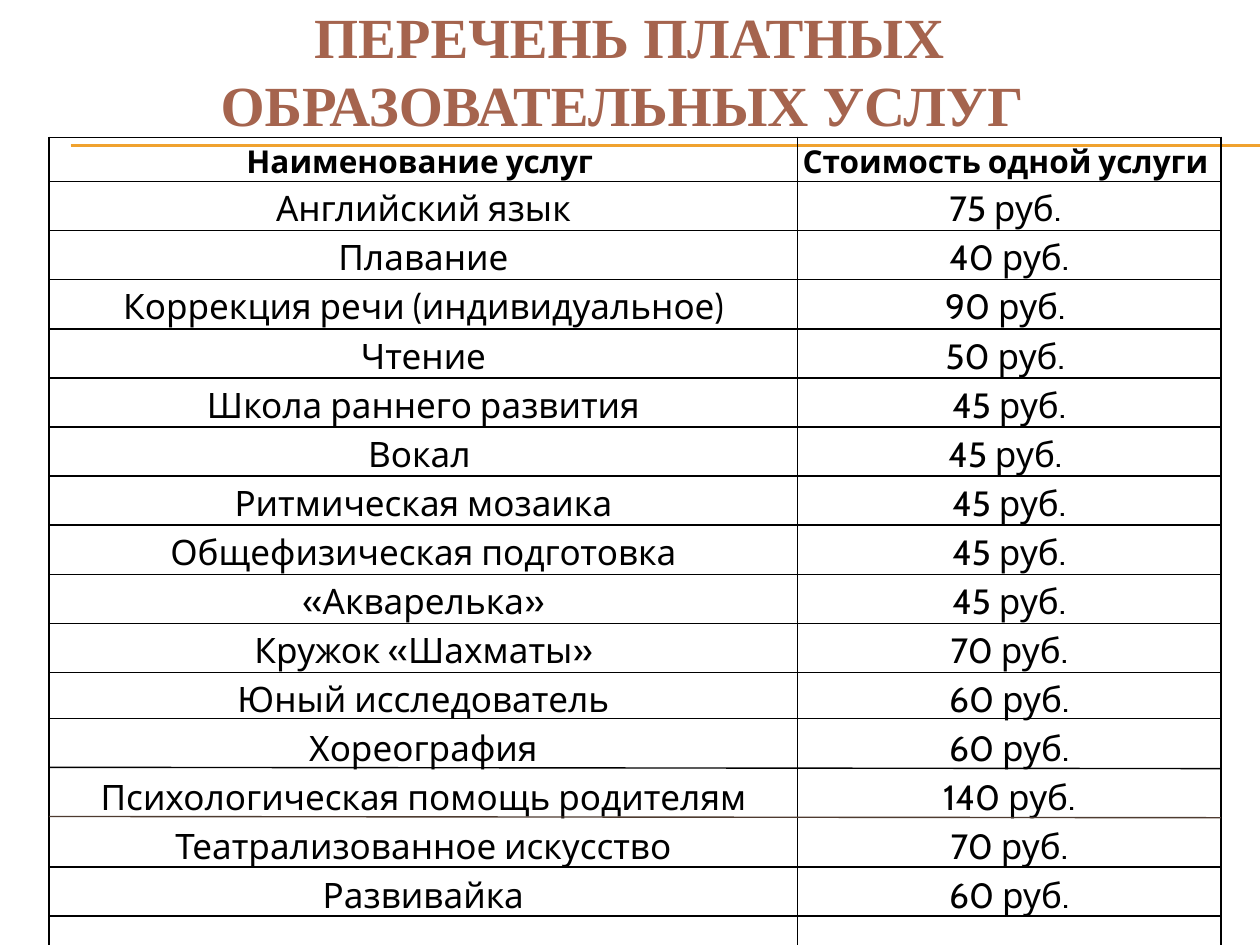
from lxml import etree
from pptx import Presentation
from pptx import util as u
from pptx.dml.color import RGBColor
from pptx.enum import shapes, text
from pptx.oxml.ns import qn

BLACK = RGBColor(0x00, 0x00, 0x00)
GOLD = RGBColor(0xF0, 0xA2, 0x2E)
BROWN = RGBColor(0x4E, 0x3B, 0x30)
RUST = RGBColor(0xA5, 0x64, 0x4E)

HEADER = ("Наименование услуг ", "Стоимость одной услуги ")
SERVICES = [
    ("Английский язык", "75 руб. "),
    ("Плавание", "40 руб."),
    ("Коррекция речи (индивидуальное)", "90 руб. "),
    ("Чтение", "50 руб. "),
    ("Школа раннего развития", "45 руб."),
    ("Вокал ", "45 руб. "),
    ("Ритмическая мозаика", "45 руб."),
    ("Общефизическая подготовка", "45 руб."),
    ("«Акварелька»", "45 руб."),
    ("Кружок «Шахматы»", "70 руб."),
]
# Services that share the tall last row
LAST_ROW = (
    ["Юный исследователь", "Хореография", "Психологическая помощь родителям",
     "Театрализованное искусство", "Развивайка"],
    ["60 руб.", "60 руб.", "140 руб.", "70 руб.", "60 руб."],
)


def add_line(s, x1, y1, x2, y2, color, width):
    ln = s.shapes.add_connector(shapes.MSO_CONNECTOR.STRAIGHT, u.Inches(x1),
                                u.Inches(y1), u.Inches(x2), u.Inches(y2))
    ln.line.color.rgb = color
    ln.line.width = u.Pt(width)
    etree.SubElement(ln._element.spPr, qn("a:effectLst"))


def fill_cell(cell, lines, size, bold, anchor):
    cell.margin_left = cell.margin_right = cell.margin_top = cell.margin_bottom = 0
    cell.vertical_anchor = anchor
    cell.fill.background()
    tf = cell.text_frame
    for i, line in enumerate(lines):
        p = tf.paragraphs[0] if i == 0 else tf.add_paragraph()
        p.alignment = text.PP_ALIGN.CENTER
        p.line_spacing = 1.15
        r = p.add_run()
        r.text = line
        r.font.name = "Cabin"
        r.font.size = u.Pt(size)
        r.font.bold = bold
        r.font.color.rgb = BLACK
    # Borders come before the fill in the cell properties
    tcPr = cell._tc.get_or_add_tcPr()
    for i, side in enumerate(("a:lnL", "a:lnR", "a:lnT", "a:lnB")):
        ln = etree.Element(qn(side), w=str(u.Pt(1)))
        fill = etree.SubElement(ln, qn("a:solidFill"))
        etree.SubElement(fill, qn("a:srgbClr"), val=str(BLACK))
        tcPr.insert(i, ln)


prs = Presentation()
prs.slide_width, prs.slide_height = u.Inches(10), u.Inches(7.5)
s = prs.slides.add_slide(prs.slide_layouts[6])

# Gold rule under the title
for y in (1.15, 1.16):
    add_line(s, 0.56, y, 10, y, GOLD, 0.75)

# Title
sp = s.shapes.add_textbox(u.Inches(0.23), u.Inches(0.16), u.Inches(9.53), u.Inches(0.79))
tf = sp.text_frame
tf.word_wrap = True
tf.vertical_anchor = text.MSO_ANCHOR.MIDDLE
p = tf.paragraphs[0]
p.alignment = text.PP_ALIGN.CENTER
r = p.add_run()
r.text = "ПЕРЕЧЕНЬ ПЛАТНЫХ ОБРАЗОВАТЕЛЬНЫХ УСЛУГ "
r.font.name = "Times New Roman"
r.font.size = u.Pt(32.4)
r.font.bold = True
r.font.color.rgb = RUST

# Price table
rows = [[[t] for t in row] for row in (HEADER, *SERVICES)] + [LAST_ROW]
heights = [0.35] + [0.39] * len(SERVICES) + [2.62]
table = s.shapes.add_table(len(rows), 2, u.Inches(0.39), u.Inches(1.09),
                           u.Inches(9.3), u.Inches(sum(heights))).table
table.first_row = table.horz_banding = False
for col, width in zip(table.columns, (5.94, 3.36)):
    col.width = u.Inches(width)
for i, (row, height) in enumerate(zip(rows, heights)):
    table.rows[i].height = u.Inches(height)
    anchor = text.MSO_ANCHOR.TOP if row is LAST_ROW else text.MSO_ANCHOR.MIDDLE
    for j, lines in enumerate(row):
        fill_cell(table.cell(i, j), lines, 18 if i == 0 else 20, i == 0, anchor)

# Separators inside the last row
for y1, y2, color in ((6.48, 6.49, BROWN), (5.7, 5.7, BLACK), (6.88, 6.88, BLACK),
                      (6.09, 6.1, BLACK), (7.27, 7.27, BLACK)):
    add_line(s, 0.39, y1, 9.69, y2, color, 0.79)

prs.save("out.pptx")
